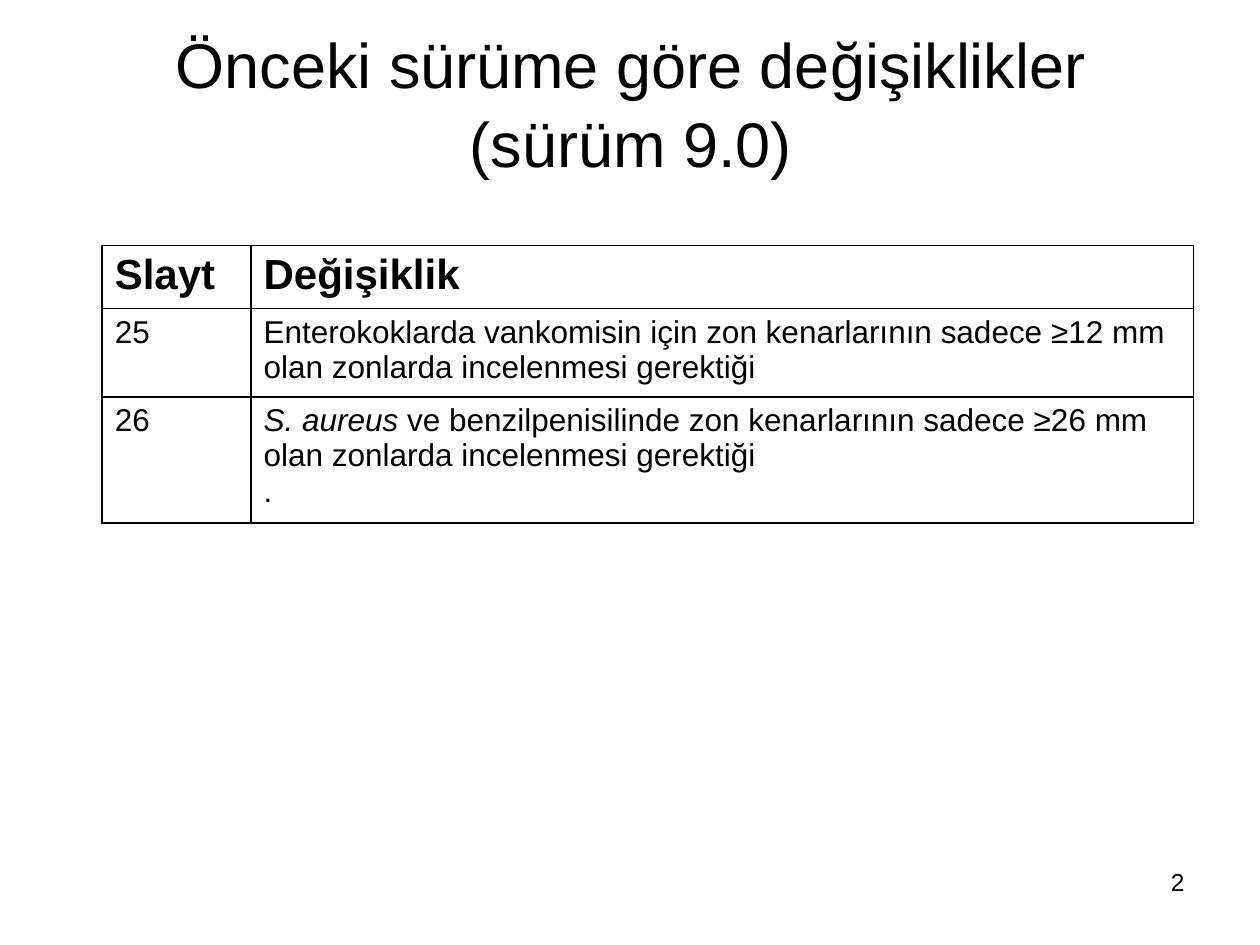
from lxml import etree
from pptx import Presentation
from pptx.dml.color import RGBColor
from pptx.enum import text
from pptx.oxml import ns
from pptx.util import Cm, Pt

BLACK = RGBColor(0, 0, 0)
WHITE = RGBColor(255, 255, 255)
FONT = "Arial"

# Each cell is a list of paragraphs.
CHANGES = [
    (["Slayt"], ["Değişiklik"]),
    (["25"], ["Enterokoklarda vankomisin için zon kenarlarının sadece ≥12 mm "
              "olan zonlarda incelenmesi gerektiği"]),
    (["26"], ["S. aureus ve benzilpenisilinde zon kenarlarının sadece ≥26 mm "
              "olan zonlarda incelenmesi gerektiği", "."]),
]
SPECIES = "S. aureus "
COLUMN_WIDTHS = [Cm(3), Cm(19)]
ROW_HEIGHTS = [Cm(1.2), Cm(1.67), Cm(2.38)]


def style_run(run, size, bold=False, italic=False):
    font = run.font
    font.name, font.size = FONT, Pt(size)
    font.bold, font.italic = bold, italic
    font.color.rgb = BLACK


def add_label(slide, wording, left, top, width, height, size, align,
              anchor=text.MSO_ANCHOR.TOP, line_spacing=1.0):
    frame = slide.shapes.add_textbox(left, top, width, height).text_frame
    frame.word_wrap = True
    frame.vertical_anchor = anchor
    frame.text = wording
    line = frame.paragraphs[0]
    line.alignment = align
    line.line_spacing = line_spacing
    style_run(line.runs[0], size)


def set_borders(cell):
    properties = cell._tc.get_or_add_tcPr()
    for position, side in enumerate(("lnL", "lnR", "lnT", "lnB")):
        border = etree.Element(ns.qn(f"a:{side}"), w=str(Pt(1)))
        fill = etree.SubElement(border, ns.qn("a:solidFill"))
        etree.SubElement(fill, ns.qn("a:srgbClr"), val=str(BLACK))
        properties.insert(position, border)


def fill_cell(cell, paragraphs, size, bold):
    """Write the paragraphs, with a leading species name in italics."""
    cell.fill.solid()
    cell.fill.fore_color.rgb = WHITE
    set_borders(cell)
    frame = cell.text_frame
    for index, wording in enumerate(paragraphs):
        line = frame.add_paragraph() if index else frame.paragraphs[0]
        if wording.startswith(SPECIES):
            species = line.add_run()
            species.text = SPECIES
            style_run(species, size, bold, italic=True)
            wording = wording.removeprefix(SPECIES)
        rest = line.add_run()
        rest.text = wording
        style_run(rest, size, bold)


def add_change_table(slide):
    table = slide.shapes.add_table(
        len(CHANGES), len(COLUMN_WIDTHS), Cm(2.06), Cm(4.95),
        sum(COLUMN_WIDTHS), sum(ROW_HEIGHTS)).table
    table.horz_banding = False
    for column, width in zip(table.columns, COLUMN_WIDTHS):
        column.width = width
    for index, (row, change) in enumerate(zip(table.rows, CHANGES)):
        row.height = ROW_HEIGHTS[index]
        is_header = index == 0
        for cell, paragraphs in zip(row.cells, change):
            fill_cell(cell, paragraphs, 24 if is_header else 18, is_header)


def main():
    deck = Presentation()
    deck.slide_width, deck.slide_height = Cm(25.4), Cm(19.05)
    slide = deck.slides.add_slide(deck.slide_layouts[6])
    add_label(slide, "Önceki sürüme göre değişiklikler (sürüm 9.0)",
              Cm(1.3), Cm(0.33), Cm(22.83), Cm(3.4), 36,
              text.PP_ALIGN.CENTER, text.MSO_ANCHOR.MIDDLE, 1.05)
    add_change_table(slide)
    add_label(slide, "2", Cm(18.21), Cm(17.35), Cm(5.92), Cm(1.32), 14,
              text.PP_ALIGN.RIGHT)
    deck.save("out.pptx")


if __name__ == "__main__":
    main()
